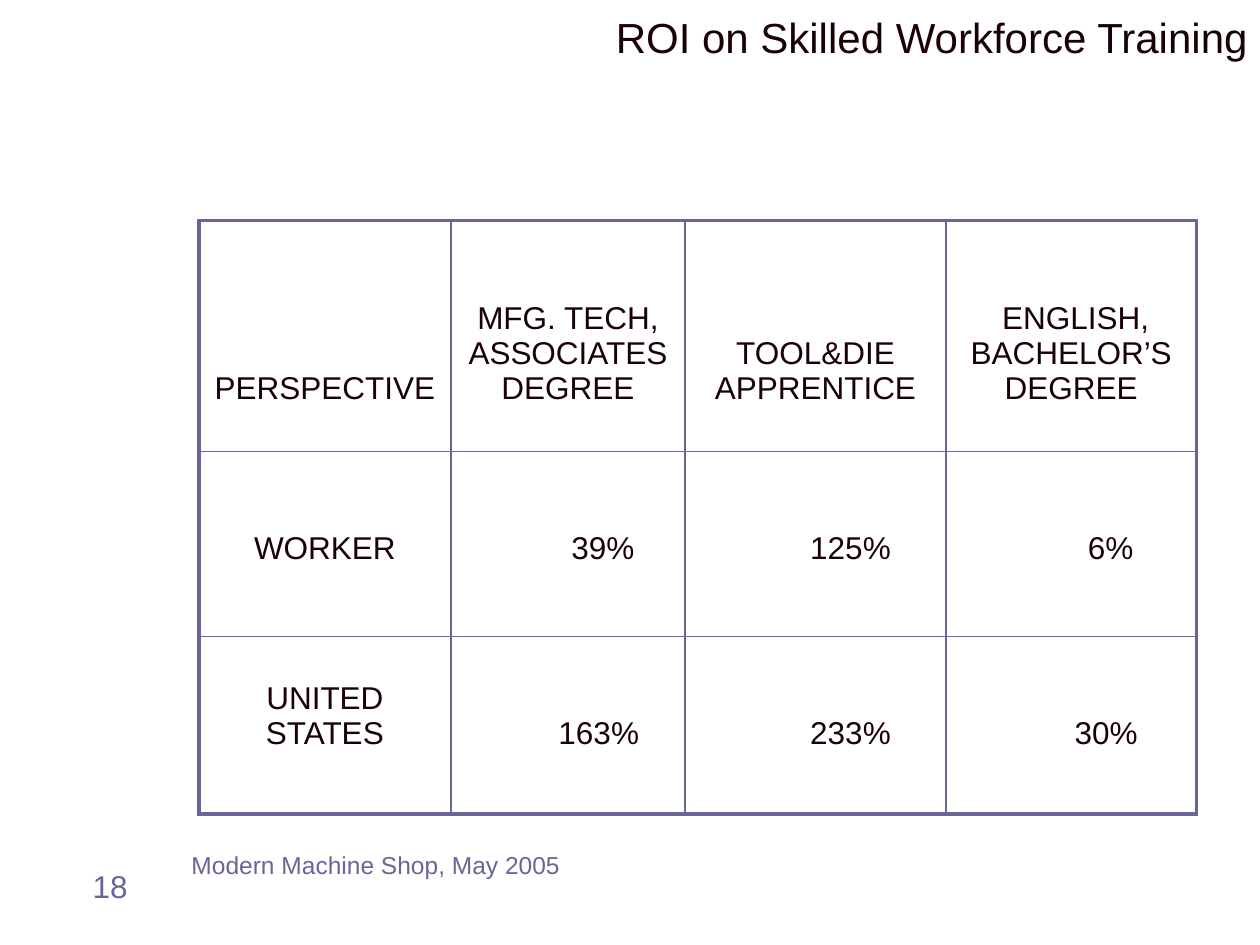
import pptx
import pptx.util
import pptx.dml.color
import pptx.enum.text
import pptx.oxml.ns
from lxml import etree

Cm, Pt = pptx.util.Cm, pptx.util.Pt
ALIGN = pptx.enum.text.PP_ALIGN
ANCHOR = pptx.enum.text.MSO_ANCHOR

INK = {"dark": "190104", "slate": "666699", "paper": "FFFFFF"}
FONT = "Arial"

# Each cell: text, first-line indent in cm
CELLS = [
    [("PERSPECTIVE", 0), ("MFG. TECH, ASSOCIATES DEGREE", 0),
     ("TOOL&DIE APPRENTICE", 0), ("ENGLISH, BACHELOR’S DEGREE", 0.18)],
    [("WORKER", 0), ("39%", 1.41), ("125%", 1.41), ("6%", 1.59)],
    [("UNITED STATES", 0), ("163%", 1.24), ("233%", 1.41), ("30%", 1.41)],
]
COLS = [5.08, 4.72, 5.26, 5.05]
ROWS = [4.65, 3.73, 3.58]
FEET = [0.91, 1.42, 1.27]  # space below the text in each row
TABLE = (4.01, 4.45)

# Text, box, size, colour, alignment, anchor, first-line indent
NOTES = [
    ("18", (1.27, 17.35, 5.92, 1.27), 18, "slate", ALIGN.LEFT, ANCHOR.TOP, 0.35),
    ("ROI on Skilled Workforce Training", (3.81, -0.84, 21.59, 3.18), 24,
     "dark", ALIGN.RIGHT, ANCHOR.MIDDLE, 0),
    ("Modern Machine Shop, May 2005", (3.61, 17.02, 9.53, 0.76), 14,
     "slate", ALIGN.LEFT, ANCHOR.TOP, 0),
]


def tint(name):
    return pptx.dml.color.RGBColor.from_string(INK[name])


def write(frame, text, size, color, align, indent):
    para = frame.paragraphs[0]
    para.alignment = align
    if indent:
        props = para._p.get_or_add_pPr()
        props.set("marL", "0")
        props.set("indent", str(Cm(indent)))
    run = para.add_run()
    run.text = text
    run.font.name = FONT
    run.font.size = Pt(size)
    run.font.color.rgb = tint(color)


def edge(cell, sides):
    """Draw cell borders; sides maps L, R, T, B to widths in points."""
    props = cell._tc.get_or_add_tcPr()
    qn = pptx.oxml.ns.qn
    for spot, (side, width) in enumerate(sides.items()):
        line = etree.Element(qn(f"a:ln{side}"), w=str(Pt(width)))
        fill = etree.SubElement(line, qn("a:solidFill"))
        etree.SubElement(fill, qn("a:srgbClr"), val=INK["slate"])
        props.insert(spot, line)


def add_note(slide, text, box, size, color, align, anchor, indent):
    frame = slide.shapes.add_textbox(*map(Cm, box)).text_frame
    frame.word_wrap = True
    frame.vertical_anchor = anchor
    write(frame, text, size, color, align, indent)


def add_grid(slide):
    tall, wide = len(ROWS), len(COLS)
    grid = slide.shapes.add_table(
        tall, wide, *map(Cm, TABLE), Cm(sum(COLS)), Cm(sum(ROWS))).table
    grid.first_row = grid.horz_banding = False
    for col, width in zip(grid.columns, COLS):
        col.width = Cm(width)
    for r, (height, foot) in enumerate(zip(ROWS, FEET)):
        grid.rows[r].height = Cm(height)
        for c, (text, indent) in enumerate(CELLS[r]):
            cell = grid.cell(r, c)
            cell.fill.solid()
            cell.fill.fore_color.rgb = tint("paper")
            cell.vertical_anchor = ANCHOR.BOTTOM
            cell.margin_bottom = Cm(foot)
            write(cell.text_frame, text, 18, "dark", ALIGN.CENTER, indent)
            outer = {"L": c == 0, "R": c == wide - 1,
                     "T": r == 0, "B": r == tall - 1}
            edge(cell, {s: 2.25 if out else 1 for s, out in outer.items()})


def main():
    deck = pptx.Presentation()
    deck.slide_width, deck.slide_height = Cm(25.4), Cm(19.05)
    slide = deck.slides.add_slide(deck.slide_layouts[6])
    add_grid(slide)
    for note in NOTES:
        add_note(slide, *note)
    deck.save("out.pptx")


if __name__ == "__main__":
    main()
